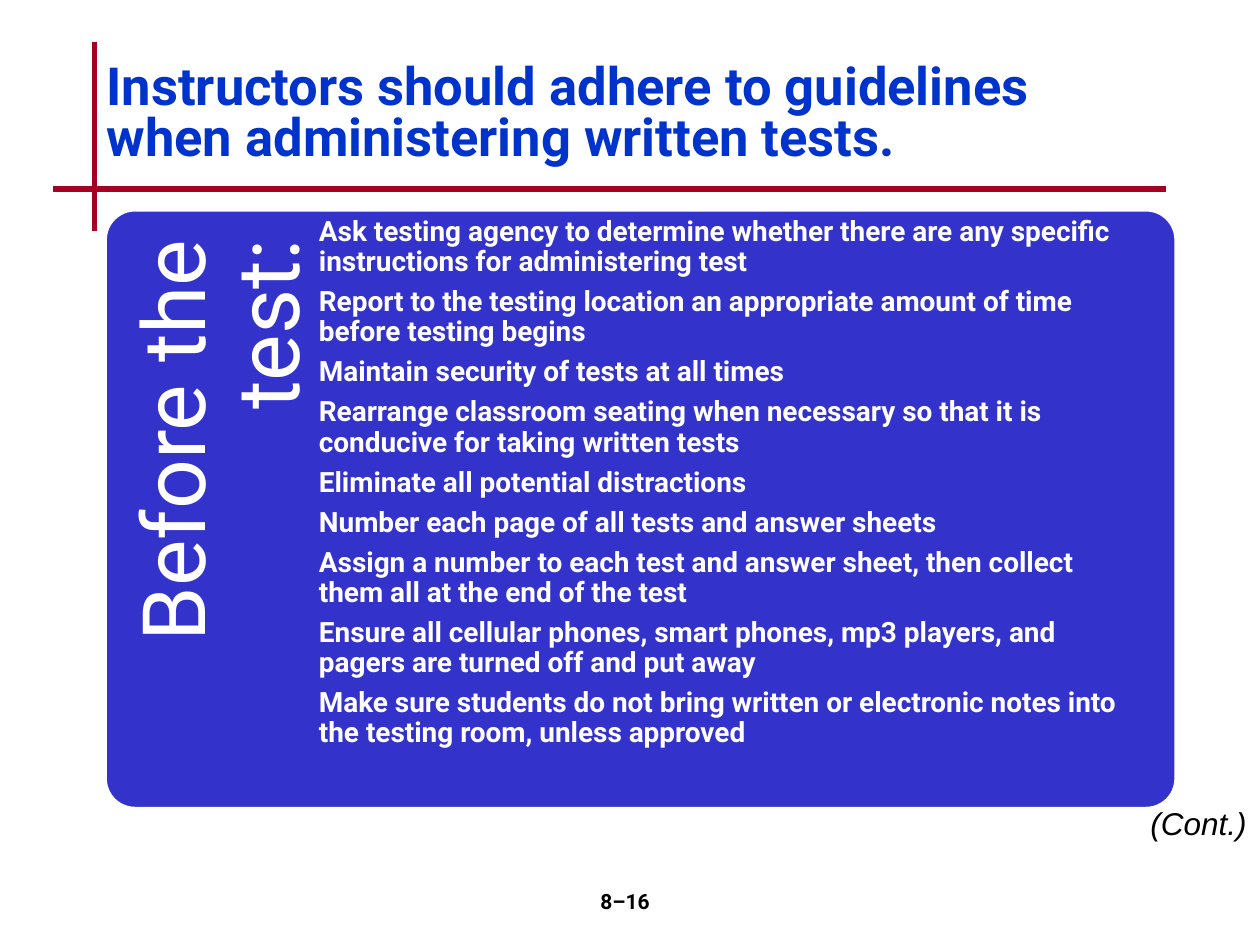
from dataclasses import dataclass

from lxml.etree import SubElement
from pptx import Presentation
from pptx.dml.color import RGBColor
from pptx.enum.shapes import MSO_CONNECTOR, MSO_SHAPE
from pptx.enum.text import MSO_ANCHOR as Anchor, MSO_AUTO_SIZE as AutoSize, PP_ALIGN as Align
from pptx.oxml.ns import qn
from pptx.util import Cm, Pt


@dataclass(frozen=True)
class Theme:
    rule: str = "A50021"
    panel: str = "3333CC"
    light: str = "FFFFFF"
    title: str = "0033CC"
    dark: str = "000000"
    font: str = "Roboto"
    note_font: str = "Arial"
    title_size: int = 30
    heading_size: int = 50
    body_size: int = 16
    note_size: int = 18
    page_size: int = 12
    rule_width: int = 3
    panel_width: int = 2


class SlideBuilder:
    def __init__(self, slide, theme):
        self.s = slide
        self.theme = theme

    def rule(self, x1, y1, x2, y2):
        line = self.s.shapes.add_connector(
            MSO_CONNECTOR.STRAIGHT, Cm(x1), Cm(y1), Cm(x2), Cm(y2))
        line.line.color.rgb = RGBColor.from_string(self.theme.rule)
        line.line.width = Pt(self.theme.rule_width)
        SubElement(line._element.spPr, qn("a:effectLst"))

    def panel(self, x, y, w, h):
        sp = self.s.shapes.add_shape(
            MSO_SHAPE.ROUNDED_RECTANGLE, Cm(x), Cm(y), Cm(w), Cm(h))
        sp.adjustments[0] = 0.05
        sp.shadow.inherit = False
        sp.fill.solid()
        sp.fill.fore_color.rgb = RGBColor.from_string(self.theme.panel)
        sp.line.color.rgb = RGBColor.from_string(self.theme.light)
        sp.line.width = Pt(self.theme.panel_width)

    def text(self, x, y, w, h, lines, size, color, font=None, bold=False, italic=False,
             align=Align.LEFT, anchor=Anchor.TOP, spacing=1.0, after=0,
             insets=(0.25, 0.13, 0.25, 0.13), wrap=True, rotation=0):
        sp = self.s.shapes.add_textbox(Cm(x), Cm(y), Cm(w), Cm(h))
        sp.rotation = rotation
        tf = sp.text_frame
        tf.word_wrap = wrap
        tf.auto_size = AutoSize.NONE if wrap else AutoSize.SHAPE_TO_FIT_TEXT
        tf.vertical_anchor = anchor
        tf.margin_left, tf.margin_top, tf.margin_right, tf.margin_bottom = map(Cm, insets)
        tf.text = "\n".join(lines)
        for p in tf.paragraphs:
            p.alignment = align
            p.line_spacing = spacing
            p.space_after = Pt(after)
            for r in p.runs:
                r.font.name = font or self.theme.font
                r.font.size = Pt(size)
                r.font.bold = bold
                r.font.italic = italic
                r.font.color.rgb = RGBColor.from_string(color)


GUIDELINES = [
    "Ask testing agency to determine whether there are any specific instructions for administering test",
    "Report to the testing location an appropriate amount of time before testing begins",
    "Maintain security of tests at all times",
    "Rearrange classroom seating when necessary so that it is conducive for taking written tests",
    "Eliminate all potential distractions",
    "Number each page of all tests and answer sheets",
    "Assign a number to each test and answer sheet, then collect them all at the end of the test",
    "Ensure all cellular phones, smart phones, mp3 players, and pagers are turned off and put away",
    "Make sure students do not bring written or electronic notes into the testing room, unless approved",
]


def main():
    prs = Presentation()
    prs.slide_width, prs.slide_height = Cm(25.4), Cm(19.05)
    theme = Theme()
    b = SlideBuilder(prs.slides.add_slide(prs.slide_layouts[6]), theme)

    # Crossed rules
    b.rule(1.9, 0.85, 1.9, 4.65)
    b.rule(1.06, 3.81, 23.5, 3.81)

    # Panel with sideways heading and guidelines
    b.panel(2.12, 4.23, 21.59, 12.07)
    b.text(-0.66, 7.01, 9.9, 4.32, ["Before the test:"], theme.heading_size, theme.light,
           align=Align.RIGHT, spacing=0.9, insets=(0, 0.48, 0.61, 0), rotation=270)
    b.text(6.43, 4.23, 16.08, 12.07, GUIDELINES, theme.body_size, theme.light, bold=True,
           spacing=0.9, after=0.35 * theme.body_size, insets=(0, 0.15, 0, 0))

    # Title
    b.text(1.9, 0.64, 21.59, 3.39,
           ["Instructors should adhere to guidelines when administering written tests."],
           theme.title_size, theme.title, bold=True, anchor=Anchor.MIDDLE, spacing=0.8)

    # Page number and continuation note
    b.text(9.96, 17.78, 5.28, 1.27, ["8–16"], theme.page_size, theme.dark,
           bold=True, align=Align.CENTER)
    b.text(22.94, 16.08, 2.46, 1.02, ["(Cont.)"], theme.note_size, theme.dark,
           font=theme.note_font, italic=True, wrap=False)

    prs.save("out.pptx")


if __name__ == "__main__":
    main()
